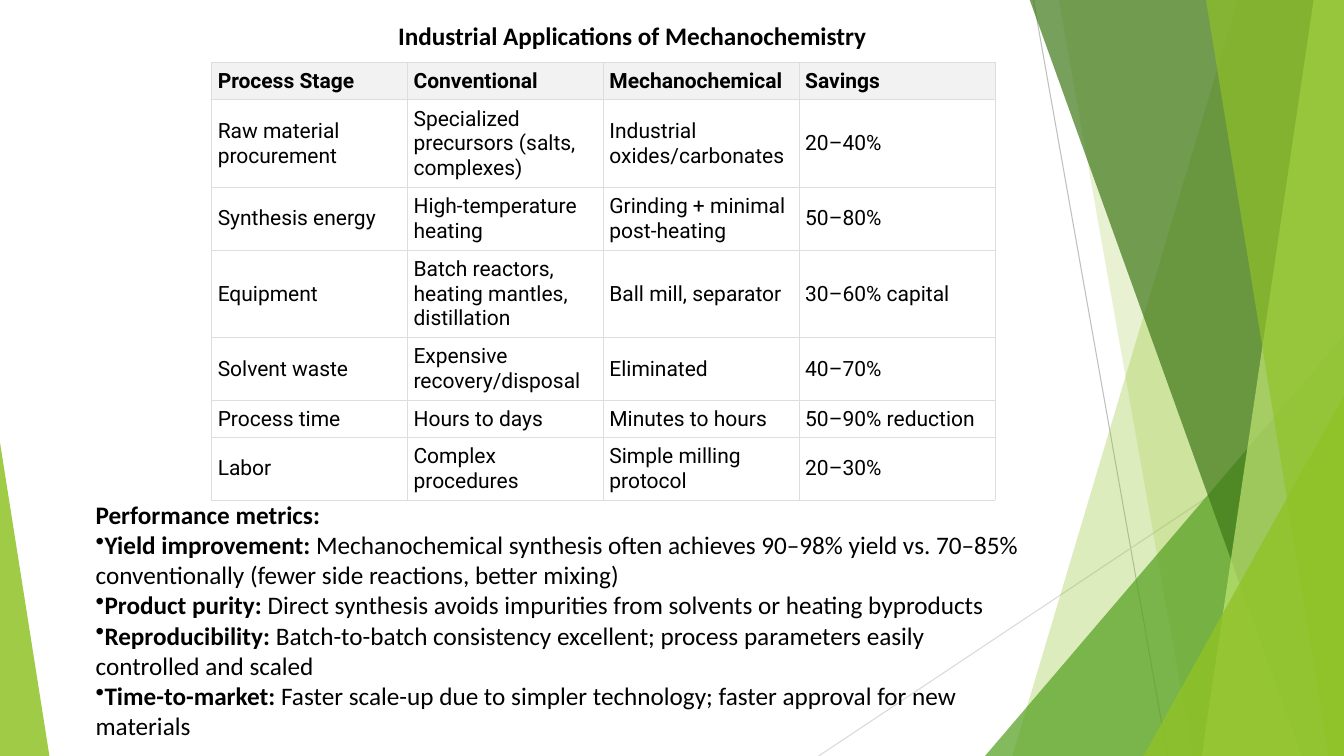
import pptx
import pptx.dml.color
import pptx.enum.shapes
import pptx.enum.text
import pptx.oxml
import pptx.oxml.ns
import pptx.util

Inches = pptx.util.Inches

# Content
TITLE = "Industrial Applications of Mechanochemistry"
STAGES = [
    ("Process Stage", "Conventional", "Mechanochemical", "Savings"),
    ("Raw material procurement", "Specialized precursors (salts, complexes)",
     "Industrial oxides/carbonates", "20–40%"),
    ("Synthesis energy", "High-temperature heating",
     "Grinding + minimal post-heating", "50–80%"),
    ("Equipment", "Batch reactors, heating mantles, distillation",
     "Ball mill, separator", "30–60% capital"),
    ("Solvent waste", "Expensive recovery/disposal", "Eliminated", "40–70%"),
    ("Process time", "Hours to days", "Minutes to hours", "50–90% reduction"),
    ("Labor", "Complex procedures", "Simple milling protocol", "20–30%"),
]
METRICS_HEADING = "Performance metrics:"
METRICS = [
    ("Yield improvement:", "Mechanochemical synthesis often achieves 90–98% yield "
     "vs. 70–85% conventionally (fewer side reactions, better mixing)"),
    ("Product purity:",
     "Direct synthesis avoids impurities from solvents or heating byproducts"),
    ("Reproducibility:",
     "Batch-to-batch consistency excellent; process parameters easily controlled and scaled"),
    ("Time-to-market:",
     "Faster scale-up due to simpler technology; faster approval for new materials"),
]

# Theme and layout, in inches and points
THEME = {
    "text": "000000", "header": "F2F2F2", "border": "DDDDDD",
    "lime": "90C226", "green": "54A021", "forest": "3F7819", "pale": "C0E474",
    "body_font": "Calibri", "table_font": "Roboto",
    "body_size": 18, "table_size": 15, "border_width": 0.6, "line_width": 0.75,
}
WIDTH, HEIGHT = 13.33, 7.5
TABLE_LEFT, TABLE_TOP, TABLE_WIDTH = 2.1, 0.62, 7.77
ROW_HEIGHT = {1: 0.36, 2: 0.61, 3: 0.85}  # by lines of text in the row
ROW_LINES = [1, 3, 2, 3, 2, 1, 2]
CELL_MARGIN = 0.06

# Decoration: lines (start, end, colour); bands (top x, bottom x, colour, opacity)
# that reach the right edge; triangles (box, apex position, colour, opacity)
LINES = [((10.25, 0), (11.58, HEIGHT), "BFBFBF"),
         ((WIDTH, 4.03), (8.12, HEIGHT), "D9D9D9")]
BACK_BANDS = [(12.28, 10.04, "lime", 30), (10.5, 11.83, "lime", 20)]
FRONT_BANDS = [(10.21, 12.91, "forest", 70), (13.03, 11.92, "pale", 70),
               (11.96, 13.18, "lime", 65)]
BACK_TRIANGLES = [((9.77, 3.33, 3.56, 4.17), 1, "green", 72)]
FRONT_TRIANGLES = [((11.34, 3.93, 1.99, 3.57), 1, "lime", 80),
                   ((0, 4.39, 0.49, 3.11), 0, "lime", 85)]

presentation = pptx.Presentation()
presentation.slide_width = Inches(WIDTH)
presentation.slide_height = Inches(HEIGHT)
slide = presentation.slides.add_slide(presentation.slide_layouts[6])


def color(value):
    return pptx.dml.color.RGBColor.from_string(value)


def add_xml(parent, tag, **attributes):
    element = pptx.oxml.parse_xml(f'<{tag} {pptx.oxml.ns.nsdecls("a")}/>')
    for name, value in attributes.items():
        element.set(name, str(value))
    parent.append(element)
    return element


def paint(shape, name, opacity):
    shape.shadow.inherit = False
    shape.fill.solid()
    shape.fill.fore_color.rgb = color(THEME[name])
    add_xml(shape.fill._xPr.find(".//" + pptx.oxml.ns.qn("a:srgbClr")),
            "a:alpha", val=opacity * 1000)
    shape.line.fill.background()


def add_bands(bands):
    for top_x, bottom_x, name, opacity in bands:
        builder = slide.shapes.build_freeform(Inches(top_x), Inches(-0.01))
        corners = [(WIDTH, -0.01), (WIDTH, HEIGHT), (bottom_x, HEIGHT)]
        builder.add_line_segments([(Inches(x), Inches(y)) for x, y in corners])
        paint(builder.convert_to_shape(), name, opacity)


def add_triangles(triangles):
    for box, apex, name, opacity in triangles:
        triangle = slide.shapes.add_shape(
            pptx.enum.shapes.MSO_SHAPE.ISOSCELES_TRIANGLE, *map(Inches, box))
        triangle.adjustments[0] = apex
        paint(triangle, name, opacity)


def add_run(paragraph, text, kind, bold):
    run = paragraph.add_run()
    run.text = text
    formats = {"name": THEME[kind + "_font"], "bold": bold,
               "size": pptx.util.Pt(THEME[kind + "_size"])}
    for name, value in formats.items():
        setattr(run.font, name, value)
    run.font.color.rgb = color(THEME["text"])


def add_text_frame(*box):
    frame = slide.shapes.add_textbox(*map(Inches, box)).text_frame
    frame.word_wrap = True
    frame.auto_size = pptx.enum.text.MSO_AUTO_SIZE.SHAPE_TO_FIT_TEXT
    return frame


# Background decoration, from back to front
for start, end, line_color in LINES:
    connector = slide.shapes.add_connector(
        pptx.enum.shapes.MSO_CONNECTOR.STRAIGHT, *map(Inches, start + end))
    connector.line.color.rgb = color(line_color)
    connector.line.width = pptx.util.Pt(THEME["line_width"])
    add_xml(connector._element.spPr, "a:effectLst")
add_bands(BACK_BANDS)
add_triangles(BACK_TRIANGLES)
add_bands(FRONT_BANDS)
add_triangles(FRONT_TRIANGLES)

# Title
add_run(add_text_frame(3.85, 0.15, 6.67, 0.4).paragraphs[0], TITLE, "body", True)

# Comparison table
heights = [ROW_HEIGHT[lines] for lines in ROW_LINES]
table = slide.shapes.add_table(
    len(STAGES), len(STAGES[0]), Inches(TABLE_LEFT), Inches(TABLE_TOP),
    Inches(TABLE_WIDTH), Inches(sum(heights))).table
table.horz_banding = False
for row, height in zip(table.rows, heights):
    row.height = Inches(height)
for row_index, stage in enumerate(STAGES):
    is_header = row_index == 0
    for column_index, text in enumerate(stage):
        cell = table.cell(row_index, column_index)
        for side in ("left", "top", "right", "bottom"):
            setattr(cell, "margin_" + side, Inches(CELL_MARGIN))
        cell.vertical_anchor = pptx.enum.text.MSO_ANCHOR.MIDDLE
        add_run(cell.text_frame.paragraphs[0], text, "table", is_header)
        for side in "LRTB":
            border = add_xml(cell._tc.get_or_add_tcPr(), "a:ln" + side,
                             w=pptx.util.Pt(THEME["border_width"]))
            add_xml(add_xml(border, "a:solidFill"), "a:srgbClr", val=THEME["border"])
        if is_header:
            cell.fill.solid()
            cell.fill.fore_color.rgb = color(THEME["header"])
        else:
            cell.fill.background()

# Performance metrics
metrics_frame = add_text_frame(0.85, 4.9, 9.5, 2.52)
add_run(metrics_frame.paragraphs[0], METRICS_HEADING, "body", True)
for label, detail in METRICS:
    paragraph = metrics_frame.add_paragraph()
    add_xml(paragraph._p.get_or_add_pPr(), "a:buChar", char="•")
    add_run(paragraph, label, "body", True)
    add_run(paragraph, " " + detail, "body", False)

presentation.save("out.pptx")
